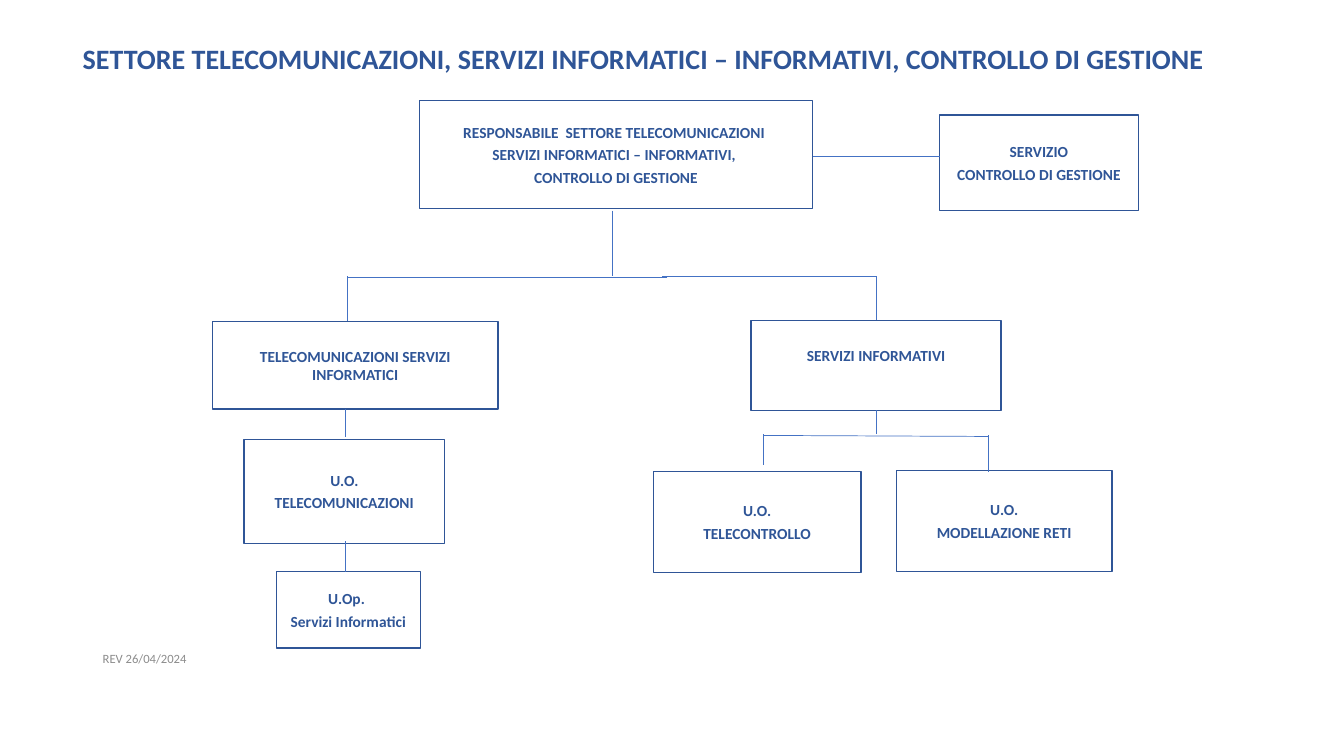
"""Build the organisation chart of the telecommunications and IT sector."""
from typing import NamedTuple

from lxml.etree import SubElement
from pptx import Presentation
from pptx.dml.color import RGBColor
from pptx.enum.shapes import MSO_CONNECTOR as Link, MSO_SHAPE as Form
from pptx.enum.text import MSO_ANCHOR as Anchor, MSO_AUTO_SIZE as Fit, PP_ALIGN as Align
from pptx.oxml.ns import qn
from pptx.slide import Slide
from pptx.text.text import TextFrame
from pptx.util import Emu, Pt

SCALE = 9144
NAVY = RGBColor(0x2F, 0x55, 0x97)
BLUE = RGBColor(0x44, 0x72, 0xC4)
GREY = RGBColor(0x8C, 0x8C, 0x8C)
WHITE = RGBColor(0xFF, 0xFF, 0xFF)
TITLE = "SETTORE TELECOMUNICAZIONI, SERVIZI INFORMATICI – INFORMATIVI, CONTROLLO DI GESTIONE"


class Box(NamedTuple):
    """A unit of the chart, in px."""
    left: int
    top: int
    width: int
    height: int
    text: str
    lift: int = 0
    wrap: bool = True


class Line(NamedTuple):
    """A straight link between two points, in px."""
    x1: int
    y1: int
    x2: int
    y2: int


BOXES = [
    Box(416, 100, 390, 107, "RESPONSABILE  SETTORE TELECOMUNICAZIONI \n"
        "SERVIZI INFORMATICI – INFORMATIVI, \nCONTROLLO DI GESTIONE", wrap=False),
    Box(932, 114, 197, 95, "SERVIZIO\nCONTROLLO DI GESTIONE"),
    Box(211, 319, 283, 87, "TELECOMUNICAZIONI SERVIZI INFORMATICI"),
    Box(745, 318, 248, 89, "SERVIZI INFORMATIVI", lift=19),
    Box(242, 436, 199, 103, "U.O.\nTELECOMUNICAZIONI"),
    Box(274, 567, 143, 76, "U.Op. \nServizi Informatici"),
    Box(648, 468, 206, 100, "U.O.\nTELECONTROLLO"),
    Box(889, 467, 214, 100, "U.O.\nMODELLAZIONE RETI"),
]
LINES = [
    Line(806, 155, 932, 155),
    Line(607, 209, 607, 274),
    Line(657, 274, 869, 274),
    Line(662, 275, 345, 275),
    Line(345, 274, 345, 318),
    Line(869, 274, 869, 317),
    Line(343, 406, 343, 434),
    Line(343, 537, 343, 567),
    Line(869, 407, 869, 431),
    Line(757, 432, 980, 433),
    Line(757, 431, 757, 461),
    Line(980, 432, 980, 468),
]


def px(count: int) -> Emu:
    """Turn px into EMU."""
    return Emu(count * SCALE)


def inset(frame: TextFrame, side: int, edge: int, lift: int = 0) -> None:
    """Set the margins, with extra room below to lift the text."""
    frame.margin_left = frame.margin_right = px(side)
    frame.margin_top = px(edge)
    frame.margin_bottom = px(edge + lift)
    frame.vertical_anchor = Anchor.MIDDLE


def style(frame: TextFrame, size: int, color: RGBColor, bold: bool,
          align: Align = Align.LEFT, after: int = 0) -> None:
    """Format every paragraph and run."""
    for para in frame.paragraphs:
        para.alignment = align
        para.space_after = Pt(after)
        for run in para.runs:
            font = run.font
            font.name, font.size, font.bold = "Calibri", Pt(size), bold
            font.color.rgb = color


def add_title(slide: Slide) -> None:
    """Fill and place the title."""
    title = slide.shapes.title
    title.left, title.top, title.width, title.height = map(px, (73, 28, 1183, 60))
    frame = title.text_frame
    frame.text = TITLE
    frame.word_wrap, frame.auto_size = True, Fit.NONE
    inset(frame, 0, 0)
    frame.margin_left = px(9)
    style(frame, 20, NAVY, True)


def add_box(slide: Slide, box: Box) -> None:
    """Draw one unit."""
    shape = slide.shapes.add_shape(Form.RECTANGLE, *map(px, box[:4]))
    shape.shadow.inherit = False
    shape.fill.solid()
    shape.fill.fore_color.rgb = WHITE
    shape.line.color.rgb = NAVY
    shape.line.width = Pt(1)
    frame = shape.text_frame
    frame.text = box.text
    frame.word_wrap = box.wrap
    inset(frame, 5, 5, box.lift)
    style(frame, 11, NAVY, True, Align.CENTER, 3)


def add_line(slide: Slide, line: Line) -> None:
    """Draw one link."""
    link = slide.shapes.add_connector(Link.STRAIGHT, *map(px, line))
    link.line.color.rgb = BLUE
    link.line.width = Pt(0.5)
    SubElement(link.element.spPr, qn("a:effectLst"))


def add_date(slide: Slide) -> None:
    """Write the revision date."""
    frame = slide.shapes.add_textbox(*map(px, (92, 632, 362, 63))).text_frame
    frame.text = "REV 26/04/2024"
    frame.word_wrap = True
    inset(frame, 10, 5, 20)
    style(frame, 9, GREY, False)


def main() -> None:
    """Build and save the slide."""
    deck = Presentation()
    deck.slide_width, deck.slide_height = px(1333), px(750)
    slide = deck.slides.add_slide(deck.slide_layouts[5])
    add_title(slide)
    for box in BOXES:
        add_box(slide, box)
    for line in LINES:
        add_line(slide, line)
    add_date(slide)
    deck.save("out.pptx")


if __name__ == "__main__":
    main()
